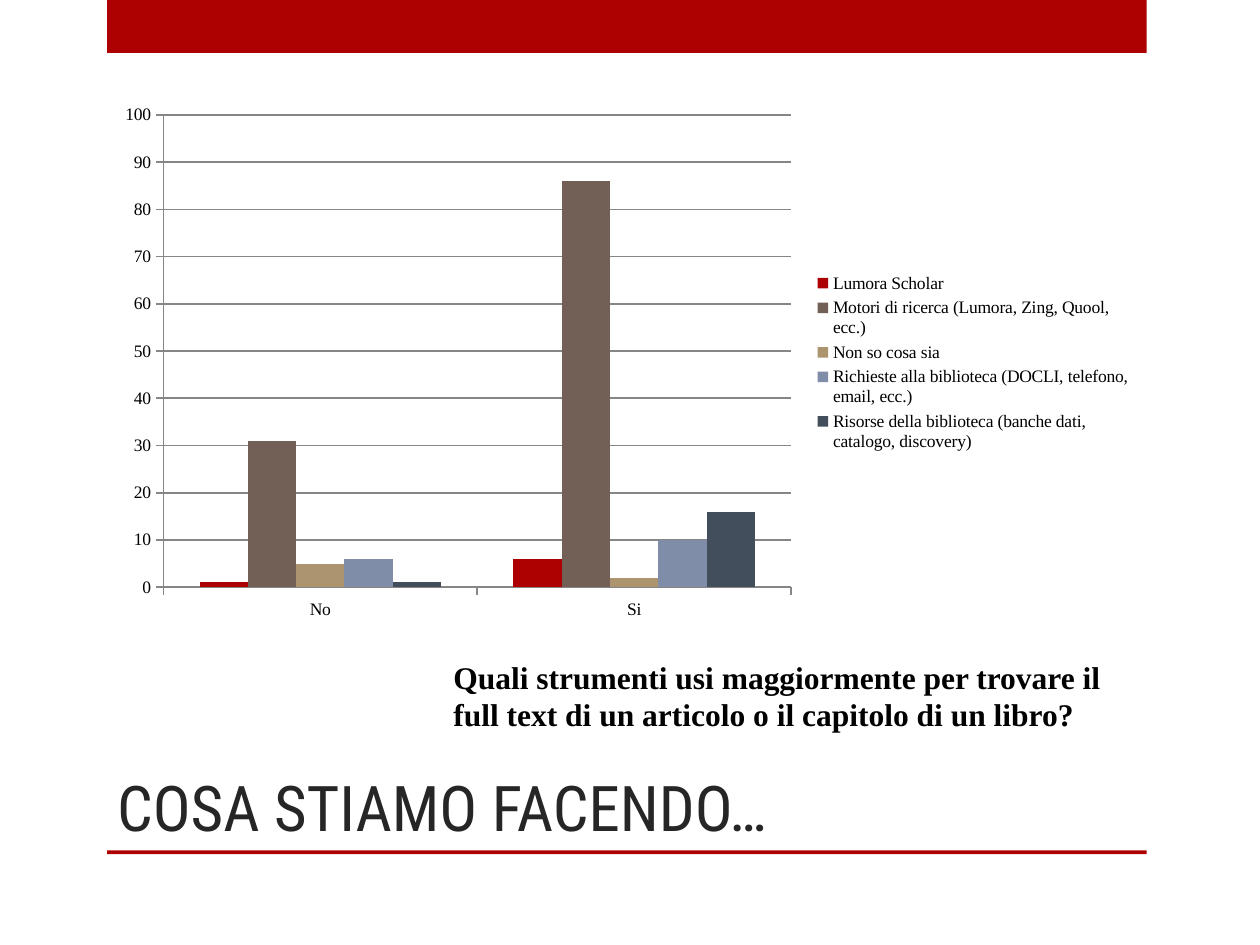
from dataclasses import dataclass

from pptx import Presentation
from pptx.chart.data import CategoryChartData
from pptx.dml.color import RGBColor
from pptx.enum.chart import XL_CHART_TYPE as ChartType, XL_LEGEND_POSITION as LegendPosition
from pptx.enum.chart import XL_TICK_MARK as TickMark
from pptx.enum.shapes import MSO_SHAPE as Shape
from pptx.enum.text import MSO_ANCHOR as Anchor, MSO_AUTO_SIZE as AutoSize, PP_ALIGN as Align
from pptx.util import Inches, Pt

COLORS = {
    "red": "AD0101",
    "brown": "726056",
    "sand": "AC956E",
    "blue": "808DA9",
    "slate": "424E5B",
    "grid": "868686",
    "title": "262626",
    "text": "000000",
}
TITLE_FONT = "Roboto Condensed"
BODY_FONT = "Times New Roman"


@dataclass
class Box:
    left: float
    top: float
    width: float
    height: float

    def lengths(self) -> tuple:
        return tuple(Inches(v) for v in (self.left, self.top, self.width, self.height))


@dataclass
class Tool:
    name: str
    answers: tuple
    color: str


BANDS = [Box(0.85, 0, 8.25, 0.42), Box(0.85, 6.75, 8.25, 0.03)]
ANSWERS = ["No", "Si"]
TOOLS = [
    Tool("Lumora Scholar", (1, 6), "red"),
    Tool("Motori di ricerca (Lumora, Zing, Quool, ecc.)", (31, 86), "brown"),
    Tool("Non so cosa sia", (5, 2), "sand"),
    Tool("Richieste alla biblioteca (DOCLI, telefono, email, ecc.)", (6, 10), "blue"),
    Tool("Risorse della biblioteca (banche dati, catalogo, discovery)", (1, 16), "slate"),
]


def rgb(name: str) -> RGBColor:
    return RGBColor.from_string(COLORS[name])


def style_font(font, face: str, size: float, color: str, bold: bool = False) -> None:
    font.name = face
    font.size = Pt(size)
    font.bold = bold
    font.color.rgb = rgb(color)


def style_line(line) -> None:
    line.color.rgb = rgb("grid")
    line.width = Pt(1)


def add_band(slide, box: Box) -> None:
    band = slide.shapes.add_shape(Shape.RECTANGLE, *box.lengths())
    band.shadow.inherit = False
    band.fill.solid()
    band.fill.fore_color.rgb = rgb("red")
    band.line.fill.background()


def add_question(slide, box: Box, wording: str) -> None:
    frame = slide.shapes.add_textbox(*box.lengths()).text_frame
    frame.word_wrap = True
    frame.auto_size = AutoSize.SHAPE_TO_FIT_TEXT
    frame.text = wording
    style_font(frame.paragraphs[0].runs[0].font, BODY_FONT, 18, "text", bold=True)


def set_title(slide, box: Box, wording: str) -> None:
    title = slide.shapes.title
    title.left, title.top, title.width, title.height = box.lengths()
    frame = title.text_frame
    frame.text = wording
    frame.word_wrap = True
    frame.auto_size = AutoSize.NONE
    frame.vertical_anchor = Anchor.BOTTOM
    heading = frame.paragraphs[0]
    heading.alignment = Align.LEFT
    style_font(heading.runs[0].font, TITLE_FONT, 36, "title")


def add_tools_chart(slide, box: Box) -> None:
    survey = CategoryChartData()
    survey.categories = ANSWERS
    for tool in TOOLS:
        survey.add_series(tool.name, tool.answers)
    chart = slide.shapes.add_chart(ChartType.COLUMN_CLUSTERED, *box.lengths(), survey).chart
    style_font(chart.font, BODY_FONT, 10, "text")
    chart.has_title = False
    chart.has_legend = True
    chart.legend.position = LegendPosition.RIGHT
    chart.legend.include_in_layout = False

    plot = chart.plots[0]
    plot.gap_width = 150
    plot.overlap = 0
    plot.vary_by_categories = False
    for series, tool in zip(plot.series, TOOLS):
        series.format.fill.solid()
        series.format.fill.fore_color.rgb = rgb(tool.color)

    for axis in (chart.category_axis, chart.value_axis):
        axis.major_tick_mark = TickMark.OUTSIDE
        axis.minor_tick_mark = TickMark.NONE
        style_line(axis.format.line)
    scale = chart.value_axis
    scale.minimum_scale, scale.maximum_scale, scale.major_unit = 0, 100, 10
    scale.has_major_gridlines = True
    style_line(scale.major_gridlines.format.line)


def main() -> None:
    deck = Presentation()
    deck.slide_width, deck.slide_height = Inches(10), Inches(7.5)
    slide = deck.slides.add_slide(deck.slide_layouts[5])
    for band in BANDS:
        add_band(slide, band)
    add_question(
        slide,
        Box(3.5, 5.17, 5.75, 0.71),
        "Quali strumenti usi maggiormente per trovare il full text di un articolo o il capitolo di un libro?",
    )
    set_title(slide, Box(0.83, 5, 7.42, 1.75), "COSA STIAMO FACENDO…")
    add_tools_chart(slide, Box(0.83, 0.75, 8.25, 4.25))
    deck.save("out.pptx")


if __name__ == "__main__":
    main()
